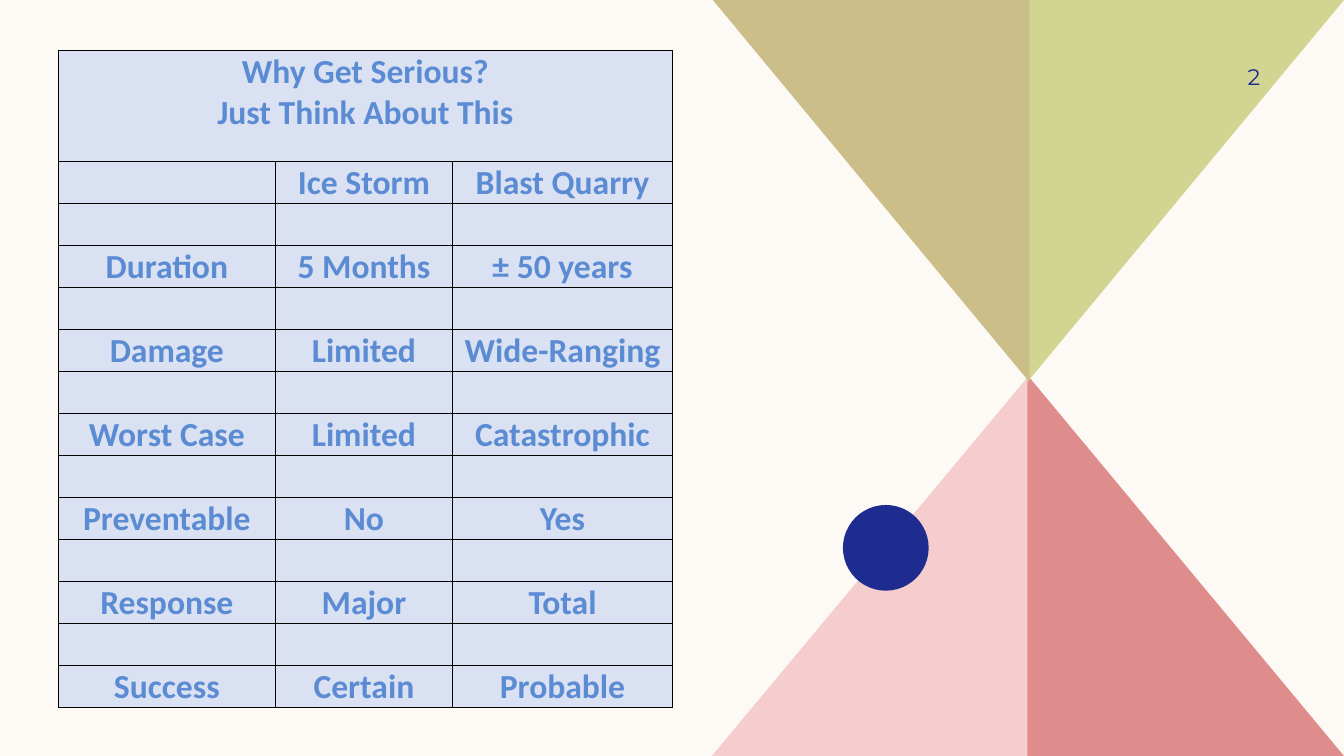
import itertools
from typing import NamedTuple

import pptx
import pptx.dml.color
import pptx.enum.shapes
import pptx.enum.text
import pptx.oxml
import pptx.oxml.ns
import pptx.util

COLORS = {
    "paper": "FDFAF6", "pink": "F5CDCE", "red": "DE8C8C", "lime": "D2D592",
    "sand": "CCBE89", "navy": "1F2C8F", "cell": "D9E1F2", "text": "5B8BD3",
    "border": "000000",
}
WIDTH, HEIGHT = pptx.util.Inches(13.33), pptx.util.Inches(7.5)
TITLE = "Why Get Serious?\nJust Think About This"
ROWS = [
    ("", "Ice Storm", "Blast Quarry"),
    ("Duration", "5 Months", "± 50 years"),
    ("Damage", "Limited", "Wide-Ranging"),
    ("Worst Case", "Limited", "Catastrophic"),
    ("Preventable", "No", "Yes"),
    ("Response", "Major", "Total"),
    ("Success", "Certain", "Probable"),
]
COLUMN_SHARES = (16.13, 13.2, 16.35)
TITLE_SHARE, ROW_SHARE = 14.67, 5.55


class Triangle(NamedTuple):
    """Right triangle with its upright side at axis; positions are percent of the slide."""
    axis: float
    tip: float
    corner: float
    base: float
    color: str


TRIANGLES = [
    Triangle(76.59, 49.6, 52.96, 100, "pink"),
    Triangle(76.44, 49.6, 100, 100, "red"),
    Triangle(76.44, 50.53, 100, 0, "lime"),
    Triangle(76.59, 50.53, 53.04, 0, "sand"),
]


def x(share: float) -> int:
    return round(WIDTH * share / 100)


def y(share: float) -> int:
    return round(HEIGHT * share / 100)


def rgb(name: str) -> pptx.dml.color.RGBColor:
    return pptx.dml.color.RGBColor.from_string(COLORS[name])


def paint(sp, color: str) -> None:
    sp.shadow.inherit = False
    sp.fill.solid()
    sp.fill.fore_color.rgb = rgb(color)
    sp.line.fill.background()


def style_font(font, name: str, size: int, color: str, bold: bool) -> None:
    font.name, font.size, font.bold = name, pptx.util.Pt(size), bold
    font.color.rgb = rgb(color)


def add_triangle(s, t: Triangle) -> None:
    builder = s.shapes.build_freeform(x(t.axis), y(t.tip))
    builder.add_line_segments([(x(t.corner), y(t.base)), (x(t.axis), y(t.base))])
    paint(builder.convert_to_shape(), t.color)


def add_borders(cell) -> None:
    tc_pr = cell._tc.get_or_add_tcPr()
    for i, side in enumerate("LRTB"):
        tc_pr.insert(i, pptx.oxml.parse_xml(
            f'<a:ln{side} {pptx.oxml.ns.nsdecls("a")} w="6350"><a:solidFill>'
            f'<a:srgbClr val="{COLORS["border"]}"/></a:solidFill></a:ln{side}>'))


def fill_cell(cell, text: str, anchor) -> None:
    cell.fill.solid()
    cell.fill.fore_color.rgb = rgb("cell")
    cell.margin_left = cell.margin_right = cell.margin_top = pptx.util.Inches(0.01)
    cell.margin_bottom = 0
    cell.vertical_anchor = anchor
    cell.text = text
    for p in cell.text_frame.paragraphs:
        p.alignment = pptx.enum.text.PP_ALIGN.CENTER
        style_font(p.font, "Calibri", 24, "text", True)
    add_borders(cell)


def add_comparison(s) -> None:
    """Draw the table: a title row, then the rows of text with an empty row between."""
    blank = ("",) * len(COLUMN_SHARES)
    spaced = list(itertools.chain.from_iterable((row, blank) for row in ROWS))[:-1]
    lines = [(TITLE, "", "")] + spaced
    heights = [TITLE_SHARE] + [ROW_SHARE] * len(spaced)
    table = s.shapes.add_table(len(lines), len(COLUMN_SHARES), x(4.35), y(6.67),
                               x(sum(COLUMN_SHARES)), y(sum(heights))).table
    table.first_row = table.horz_banding = False
    for column, share in zip(table.columns, COLUMN_SHARES):
        column.width = x(share)
    for row, share in zip(table.rows, heights):
        row.height = y(share)
    for i, line in enumerate(lines):
        anchor = pptx.enum.text.MSO_ANCHOR.BOTTOM if i else pptx.enum.text.MSO_ANCHOR.TOP
        for j, text in enumerate(line):
            fill_cell(table.cell(i, j), text, anchor)
    table.cell(0, 0).merge(table.cell(0, len(COLUMN_SHARES) - 1))


def add_page_number(s) -> None:
    tf = s.shapes.add_textbox(x(85), y(6.67), x(8.78), y(6.93)).text_frame
    tf.word_wrap = True
    tf.margin_right = 0
    tf.vertical_anchor = pptx.enum.text.MSO_ANCHOR.MIDDLE
    p = tf.paragraphs[0]
    p.text = "2"
    p.alignment = pptx.enum.text.PP_ALIGN.RIGHT
    style_font(p.font, "Montserrat", 16, "navy", False)


def main() -> None:
    prs = pptx.Presentation()
    prs.slide_width, prs.slide_height = WIDTH, HEIGHT
    s = prs.slides.add_slide(prs.slide_layouts[6])
    s.background.fill.solid()
    s.background.fill.fore_color.rgb = rgb("paper")
    for triangle in TRIANGLES:
        add_triangle(s, triangle)
    dot = s.shapes.add_shape(pptx.enum.shapes.MSO_SHAPE.OVAL,
                             x(62.72), y(66.8), x(6.38), x(6.38))
    paint(dot, "navy")
    add_comparison(s)
    add_page_number(s)
    prs.save("out.pptx")


if __name__ == "__main__":
    main()
